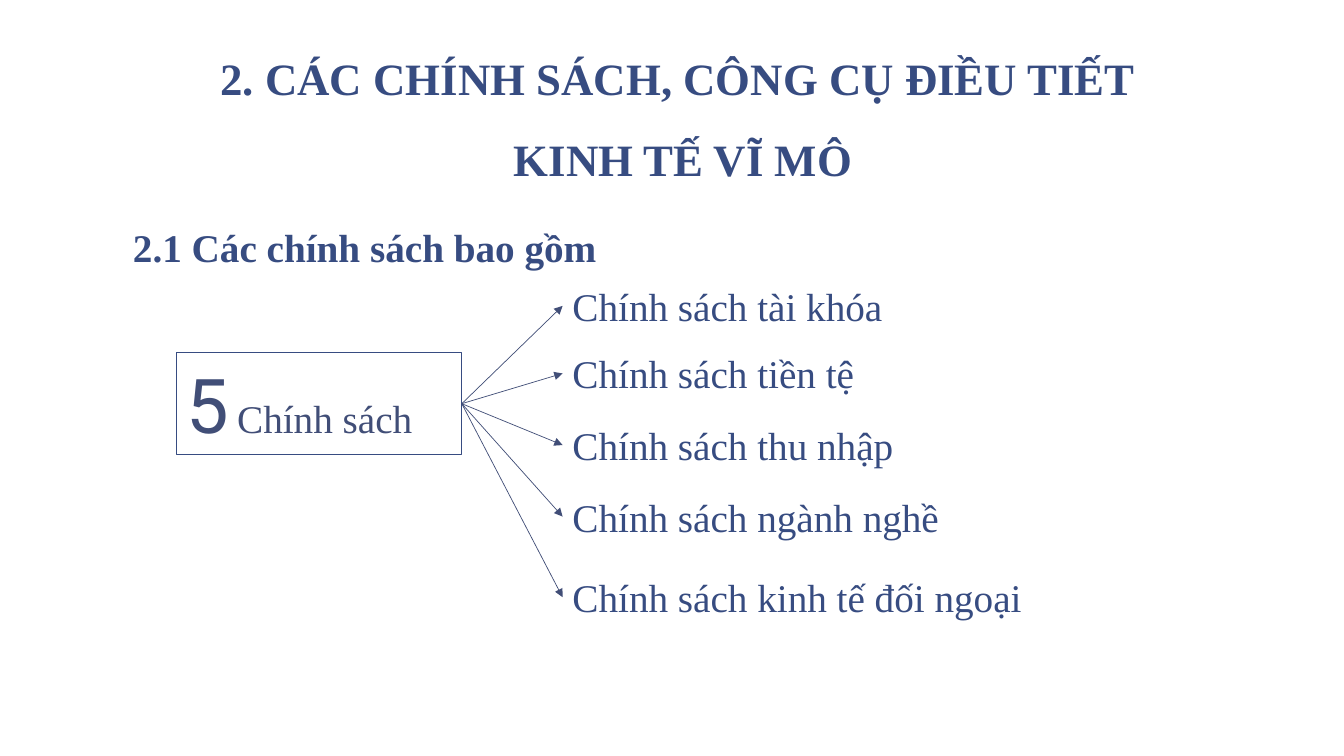
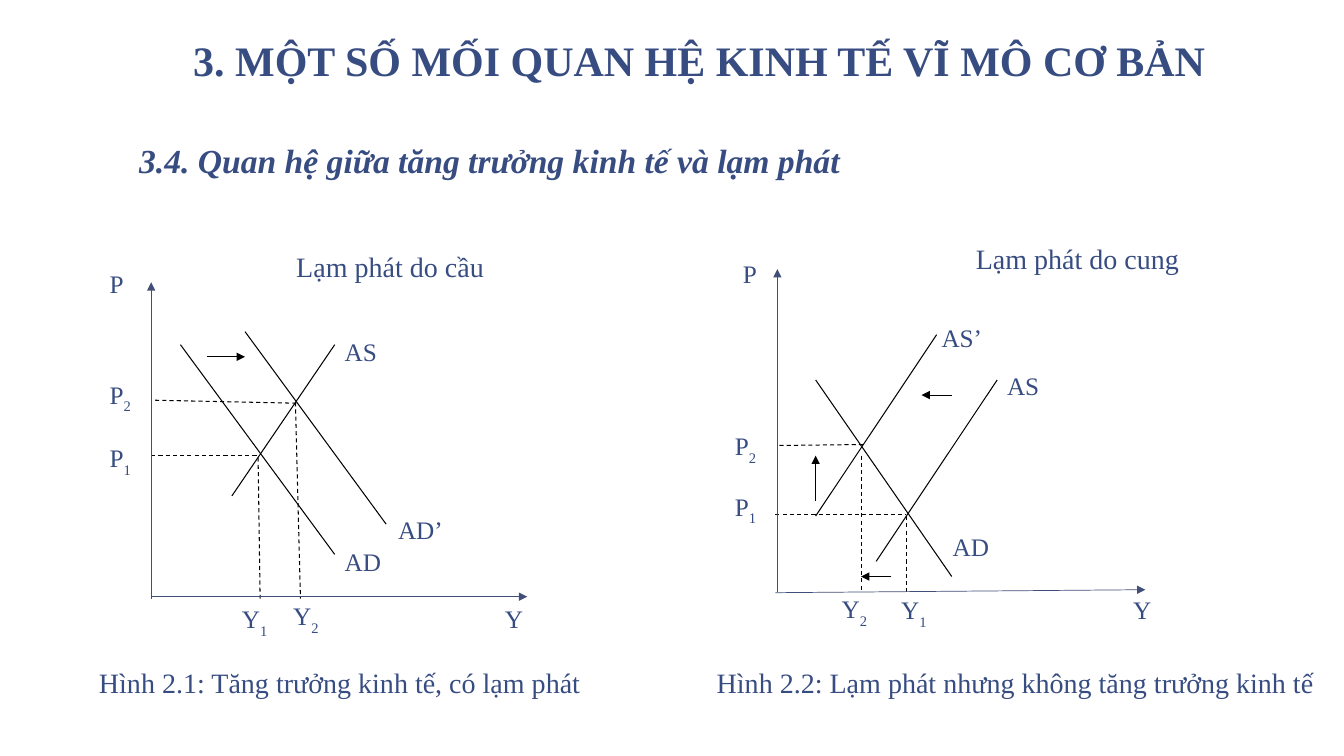
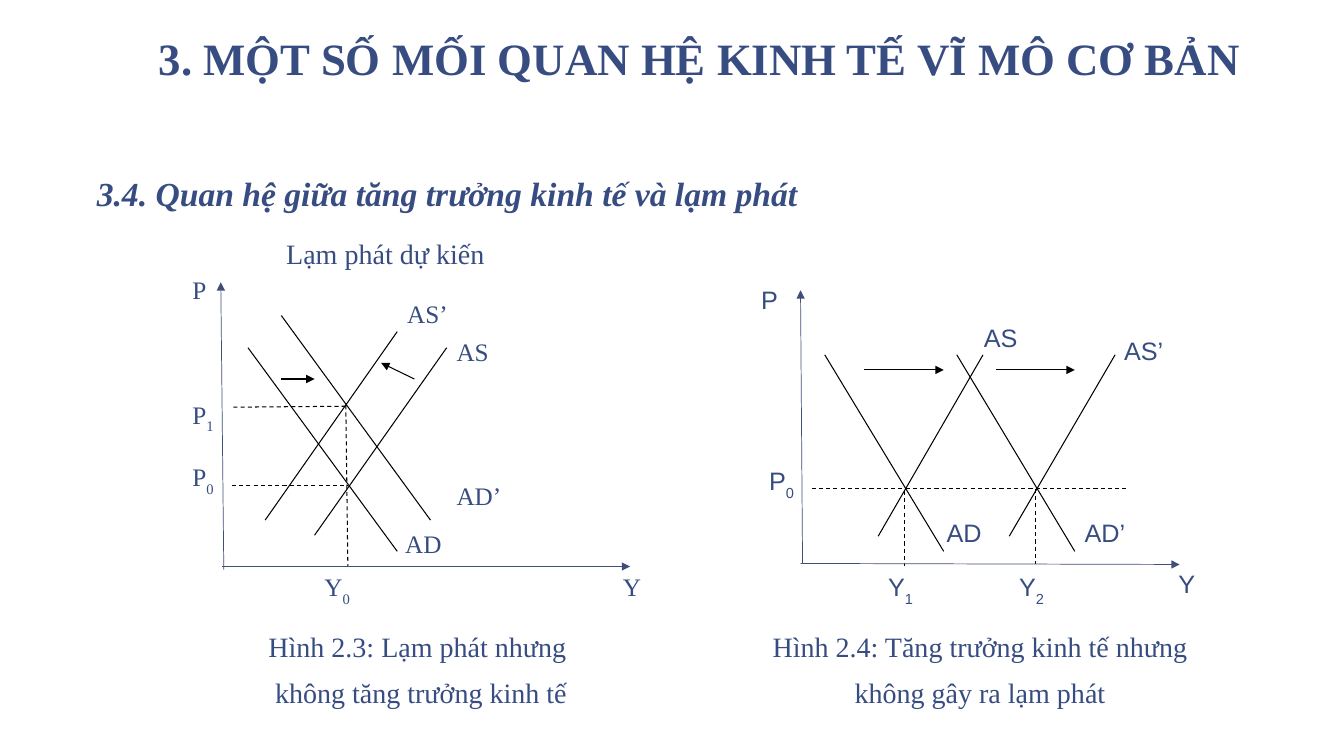
"""Build three slides on macroeconomic policies and inflation diagrams."""
from lxml import etree
from pptx import Presentation
from pptx.dml.color import RGBColor
from pptx.enum import dml, shapes, text
from pptx.oxml.ns import qn
from pptx.util import Inches, Pt

NAVY = RGBColor(0x37, 0x4C, 0x81)
SLATE = RGBColor(0x41, 0x4E, 0x77)
BLACK = RGBColor(0, 0, 0)
WHITE = RGBColor(0xFF, 0xFF, 0xFF)
SERIF, SANS, DIGIT = "Times New Roman", "Arial", "Roboto"
CENTER = text.PP_ALIGN.CENTER
LABEL_WIDTH, LABEL_HEIGHT = 0.84, 0.45

POLICY_TITLE = "2. CÁC CHÍNH SÁCH, CÔNG CỤ ĐIỀU TIẾT \vKINH TẾ VĨ MÔ"
POLICY_HEADING = "2.1 Các chính sách bao gồm"
POLICY_HUB = [("5", 54, DIGIT), (" ", 24, DIGIT), ("Chính sách", 28, SERIF)]
POLICIES = [
    ("Chính sách tài khóa", 2.75),
    ("Chính sách tiền tệ", 3.42),
    ("Chính sách thu nhập", 4.13),
    ("Chính sách ngành nghề", 4.84),
    ("Chính sách kinh tế đối ngoại", 5.64),
]

RELATION_TITLE = "3. MỘT SỐ MỐI QUAN HỆ KINH TẾ VĨ MÔ CƠ BẢN"
RELATION_HEADING = "3.4. Quan hệ giữa tăng trưởng kinh tế và lạm phát"

DEMAND_PULL = {
    "font": SERIF,
    "heading": ("Lạm phát do cầu", 2.84, 2.43),
    "caption": (["Hình 2.1: Tăng trưởng kinh tế, có lạm phát"], 0.83, 6.55, 5.08, None),
    "labels": [
        ("P", 0.99, 2.61), ("P_2", 0.99, 3.71), ("P_1", 0.99, 4.34),
        ("Y_1", 2.3, 5.94), ("Y_2", 2.81, 5.91), ("Y", 4.91, 5.94),
        ("AS", 3.32, 3.29), ("AD’", 3.85, 5.05), ("AD", 3.32, 5.37),
    ],
    "axes": [(1.5, 5.92, 5.23, 5.92), (1.5, 5.94, 1.5, 2.8)],
    "curves": [(1.79, 3.42, 3.32, 5.5), (2.3, 4.92, 3.32, 3.42), (2.43, 3.29, 3.83, 5.2)],
    "guides": [
        (1.5, 4.52, 2.56, 4.52), (2.56, 4.54, 2.58, 5.94),
        (2.94, 4, 1.5, 3.97), (2.93, 3.99, 2.98, 5.94),
    ],
    "shifts": [(2.05, 3.54, 2.43, 3.54)],
}
COST_PUSH = {
    "font": SERIF,
    "heading": ("Lạm phát do cung", 9.58, 2.35),
    "caption": (["Hình 2.2: Lạm phát nhưng không tăng trưởng kinh tế"], 7, 6.55, 6.14, None),
    "labels": [
        ("P", 7.27, 2.51), ("P_2", 7.19, 4.22), ("P_1", 7.19, 4.82),
        ("Y_2", 8.25, 5.84), ("Y_1", 8.84, 5.85), ("Y", 11.14, 5.85),
        ("AS’", 9.24, 3.15), ("AS", 9.89, 3.62), ("AD", 9.35, 5.22),
    ],
    "axes": [(7.69, 5.88, 11.36, 5.85), (7.71, 5.87, 7.71, 2.67)],
    "curves": [(8.09, 3.77, 9.44, 5.72), (8.69, 5.57, 9.89, 3.77), (8.09, 5.12, 9.29, 3.32)],
    "guides": [
        (7.69, 5.1, 8.99, 5.1), (8.99, 5.12, 8.99, 5.87),
        (8.56, 4.41, 7.71, 4.42), (8.54, 4.52, 8.54, 5.87),
    ],
    "shifts": [(9.44, 3.92, 9.14, 3.92), (8.09, 4.97, 8.09, 4.52), (8.84, 5.72, 8.54, 5.72)],
}
EXPECTED = {
    "font": SERIF,
    "heading": ("Lạm phát dự kiến", 2.74, 2.3),
    "caption": (["Hình 2.3: Lạm phát nhưng ", "không tăng trưởng kinh tế"], 1.3, 6.07, 5.75, Pt(33)),
    "labels": [
        ("P", 1.81, 2.67), ("P_1", 1.81, 3.91), ("P_0", 1.81, 4.53),
        ("Y_0", 3.12, 5.62), ("Y", 6.08, 5.62),
        ("AS’", 3.94, 2.91), ("AS", 4.43, 3.29), ("AD’", 4.43, 4.72), ("AD", 3.92, 5.19),
    ],
    "axes": [(2.2, 5.62, 6.25, 5.62), (2.22, 5.65, 2.19, 2.8)],
    "curves": [
        (2.46, 3.45, 3.94, 5.47), (2.79, 3.13, 4.27, 5.16),
        (3.12, 5.31, 4.43, 3.45), (2.63, 5.16, 3.94, 3.29),
    ],
    "guides": [(2.3, 4.82, 3.45, 4.82), (3.43, 4.03, 2.29, 4.04), (3.43, 4.02, 3.45, 5.62)],
    "shifts": [(4.11, 3.76, 3.78, 3.6), (2.79, 3.76, 3.12, 3.76)],
}
GROWTH = {
    "font": SANS,
    "heading": None,
    "caption": (["Hình 2.4: Tăng trưởng kinh tế nhưng không gây ra lạm phát"], 7.53, 6.07, 4.38, Pt(33)),
    "labels": [
        ("P", 7.45, 2.77), ("P_0", 7.53, 4.57),
        ("Y_1", 8.71, 5.62), ("Y_2", 10.01, 5.62), ("Y", 11.59, 5.59),
        ("AS", 9.66, 3.15), ("AS’", 11.05, 3.28), ("AD", 9.29, 5.08), ("AD’", 10.66, 5.08),
    ],
    "axes": [(7.94, 5.59, 11.7, 5.6), (7.96, 5.59, 7.94, 2.88)],
    "curves": [
        (8.18, 3.52, 9.36, 5.47), (9.49, 3.52, 10.66, 5.47),
        (8.71, 5.32, 9.75, 3.52), (10.01, 5.32, 11.06, 3.52),
    ],
    "guides": [(8.05, 4.85, 11.19, 4.85), (8.97, 4.87, 8.97, 5.62), (10.27, 4.85, 10.27, 5.6)],
    "shifts": [(8.57, 3.67, 9.36, 3.67), (9.88, 3.67, 10.66, 3.67)],
}
RELATION_SLIDES = [
    {"title_size": 30, "heading_at": (1.25, 1.35), "diagrams": [DEMAND_PULL, COST_PUSH]},
    {"title_size": 32, "heading_at": (0.83, 1.67), "diagrams": [EXPECTED, GROWTH]},
]


def add_text(slide, lines, x, y, width, height, size, font=SERIF, bold=False,
             italic=False, align=None, spacing=None, wide_margins=False):
    """Add a wrapped text box; an underscore marks a subscript."""
    box = slide.shapes.add_textbox(*map(Inches, (x, y, width, height)))
    frame = box.text_frame
    frame.word_wrap = True
    if wide_margins:
        frame.margin_left = frame.margin_right = Inches(0.13)
        frame.margin_top = frame.margin_bottom = Inches(0.07)
    for index, line in enumerate(lines):
        paragraph = frame.add_paragraph() if index else frame.paragraphs[0]
        base, _, subscript = line.partition("_")
        paragraph.text = base
        if subscript:
            run = paragraph.add_run()
            run.text = subscript
            run._r.get_or_add_rPr().set("baseline", "-30000")
        paragraph.alignment = align
        paragraph.line_spacing = spacing
        paragraph.font.name = font
        paragraph.font.size = Pt(size)
        paragraph.font.bold = bold
        paragraph.font.italic = italic
        paragraph.font.color.rgb = NAVY
    return box


def add_title(slide, title, width, height, size, spacing):
    """Add the centred, bottom-anchored slide title."""
    box = add_text(slide, [title], 1.22, 0.08, width, height, size, bold=True,
                   align=CENTER, spacing=spacing, wide_margins=True)
    box.text_frame.vertical_anchor = text.MSO_ANCHOR.BOTTOM


def add_line(slide, ends, color=BLACK, weight=0.75, dashed=False, arrow=False):
    """Add a straight line, optionally dashed or with an arrowhead."""
    line = slide.shapes.add_connector(shapes.MSO_CONNECTOR.STRAIGHT, *map(Inches, ends))
    line.line.color.rgb = color
    line.line.width = Pt(weight)
    if dashed:
        line.line.dash_style = dml.MSO_LINE.DASH
    if arrow:
        etree.SubElement(line.line._get_or_add_ln(), qn("a:tailEnd"), type="triangle")
    etree.SubElement(line._element.spPr, qn("a:effectLst"))
    return line


def add_diagram(slide, diagram):
    """Draw one price-output diagram with its labels and caption."""
    if diagram["heading"]:
        heading, x, y = diagram["heading"]
        add_text(slide, [heading], x, y, 2.5, LABEL_HEIGHT, 20)
    lines, x, y, width, spacing = diagram["caption"]
    add_text(slide, lines, x, y, width, LABEL_HEIGHT, 20, align=CENTER, spacing=spacing)
    for label, x, y in diagram["labels"]:
        add_text(slide, [label], x, y, LABEL_WIDTH, LABEL_HEIGHT, 18, diagram["font"])
    for ends in diagram["guides"]:
        add_line(slide, ends, dashed=True)
    for ends in diagram["curves"]:
        add_line(slide, ends)
    for ends in diagram["shifts"]:
        add_line(slide, ends, arrow=True)
    for ends in diagram["axes"]:
        add_line(slide, ends, SLATE, 0.5, arrow=True)


def add_policy_slide(slide):
    """Draw the hub box and its arrows to the policies."""
    add_title(slide, POLICY_TITLE, 11.11, 1.83, 32, 1.5)
    add_text(slide, [POLICY_HEADING], 1.22, 2.17, 5.19, 0.57, 28, bold=True)
    hub = slide.shapes.add_shape(shapes.MSO_SHAPE.RECTANGLE,
                                 *map(Inches, (1.75, 3.5, 2.83, 1.01)))
    hub.shadow.inherit = False
    hub.fill.solid()
    hub.fill.fore_color.rgb = WHITE
    hub.line.color.rgb = NAVY
    hub.line.width = Pt(1)
    hub.text_frame.vertical_anchor = text.MSO_ANCHOR.TOP
    words = hub.text_frame.paragraphs[0]
    words.alignment = text.PP_ALIGN.LEFT
    for word, size, font in POLICY_HUB:
        run = words.add_run()
        run.text = word
        run.font.size = Pt(size)
        run.font.name = font
        run.font.color.rgb = SLATE
    for policy, y in POLICIES:
        target = add_text(slide, [policy], 5.58, y, 5, 0.57, 28)
        arrow = add_line(slide, (4.58, 4, 5.58, y), SLATE, 0.5, arrow=True)
        arrow.begin_connect(hub, 3)
        arrow.end_connect(target, 1)


def main():
    """Build and save the presentation."""
    deck = Presentation()
    deck.slide_width, deck.slide_height = Inches(13.33), Inches(7.5)
    blank = deck.slide_layouts[6]
    add_policy_slide(deck.slides.add_slide(blank))
    for content in RELATION_SLIDES:
        slide = deck.slides.add_slide(blank)
        add_title(slide, RELATION_TITLE, 11.44, 0.83, content["title_size"], 0.85)
        add_text(slide, [RELATION_HEADING], *content["heading_at"], 11.11, 0.6, 24,
                 bold=True, italic=True, spacing=0.95, wide_margins=True)
        for diagram in content["diagrams"]:
            add_diagram(slide, diagram)
    deck.save("out.pptx")


if __name__ == "__main__":
    main()
